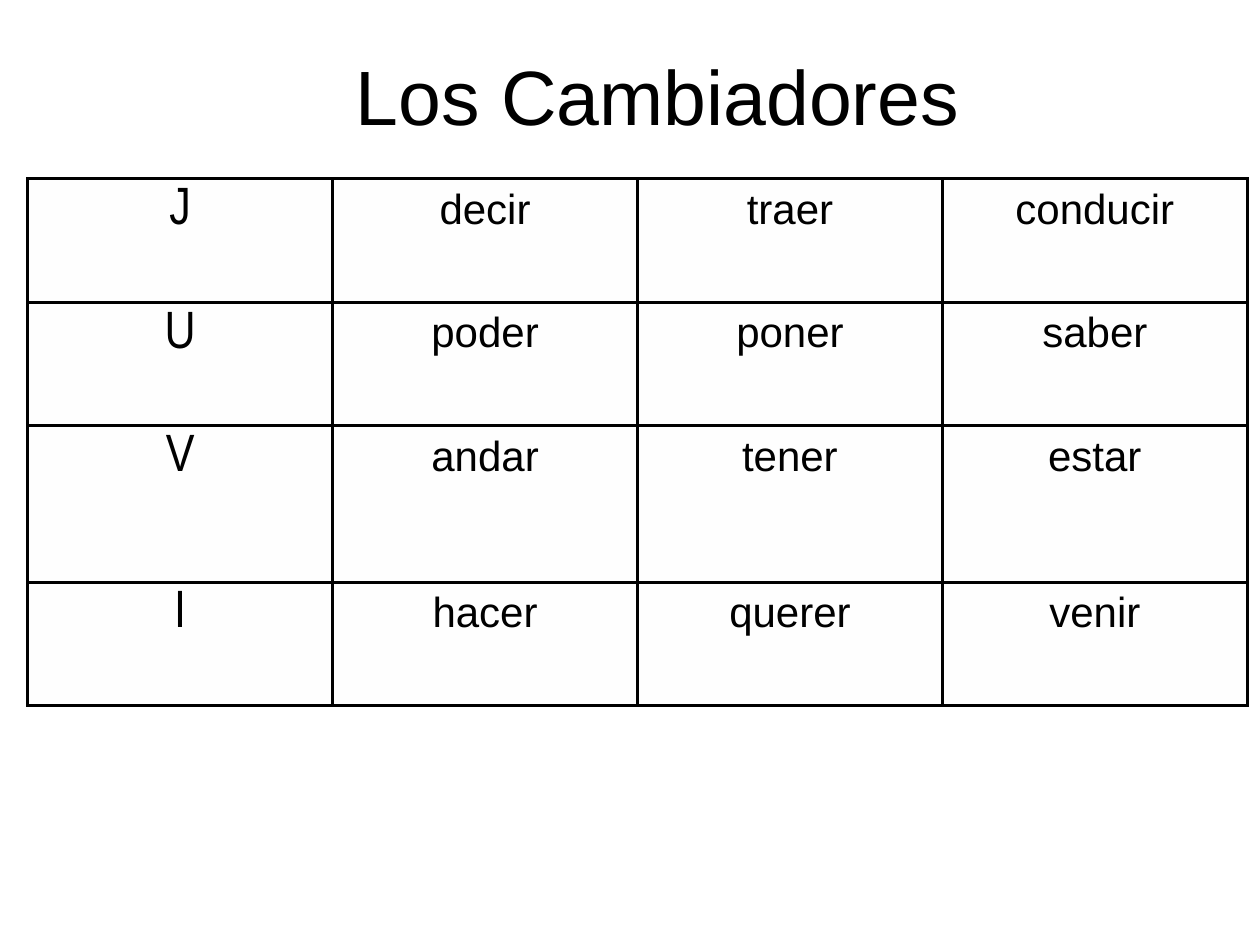
from dataclasses import dataclass

from lxml.etree import SubElement
from pptx import Presentation
from pptx.dml.color import RGBColor
from pptx.enum.text import MSO_ANCHOR, PP_ALIGN
from pptx.oxml.ns import qn
from pptx.util import Inches, Pt


@dataclass(frozen=True)
class Theme:
    ink: str = "000000"
    paper: str = "FEFEFE"
    font: str = "Arial"
    narrow: str = "Arial Narrow"
    title: int = 44
    stem: int = 30
    verb: int = 24
    rule: int = 2


def write(frame, text, size, font, color, align=PP_ALIGN.CENTER):
    para = frame.paragraphs[0]
    para.alignment = align
    run = para.add_run()
    run.text = text
    run.font.size = Pt(size)
    run.font.name = font
    run.font.color.rgb = RGBColor.from_string(color)


def frame_cell(cell, color, width):
    """Rule all four sides; call before the fill, which must come after."""
    props = cell._tc.get_or_add_tcPr()
    for side in ("lnL", "lnR", "lnT", "lnB"):
        line = SubElement(props, qn(f"a:{side}"), w=str(Pt(width)))
        fill = SubElement(line, qn("a:solidFill"))
        SubElement(fill, qn("a:srgbClr"), val=color)


class Deck:
    def __init__(self, slide, theme):
        self.slide = slide
        self.theme = theme

    def title(self, text, left, top, width, height):
        box = self.slide.shapes.add_textbox(
            Inches(left), Inches(top), Inches(width), Inches(height))
        frame = box.text_frame
        frame.word_wrap = True
        frame.vertical_anchor = MSO_ANCHOR.MIDDLE
        frame.margin_left = frame.margin_right = Inches(0.1)
        frame.margin_top = frame.margin_bottom = Inches(0.1)
        write(frame, text, size=self.theme.title, font=self.theme.font,
              color=self.theme.ink)

    def table(self, rows, left, top, width, heights):
        count = len(rows[0])
        grid = self.slide.shapes.add_table(
            len(rows), count, Inches(left), Inches(top),
            Inches(width * count), Inches(sum(heights))).table
        grid.first_row = grid.horz_banding = False
        for col in grid.columns:
            col.width = Inches(width)
        for r, (row, height) in enumerate(zip(rows, heights)):
            grid.rows[r].height = Inches(height)
            for c, text in enumerate(row):
                self.cell(grid.cell(r, c), text, stem=c == 0)

    def cell(self, cell, text, stem):
        theme = self.theme
        cell.margin_left = cell.margin_right = Inches(0.06)
        cell.margin_top = cell.margin_bottom = Inches(0.06)
        frame_cell(cell, theme.ink, theme.rule)
        cell.fill.solid()
        cell.fill.fore_color.rgb = RGBColor.from_string(theme.paper)
        write(cell.text_frame, text, color=theme.ink,
              size=theme.stem if stem else theme.verb,
              font=theme.narrow if stem else theme.font)


VERBS = [
    ("J", "decir", "traer", "conducir"),
    ("U", "poder", "poner", "saber"),
    ("V", "andar", "tener", "estar"),
    ("I", "hacer", "querer", "venir"),
]


def main():
    prs = Presentation()
    prs.slide_width, prs.slide_height = Inches(10), Inches(7.5)
    deck = Deck(prs.slides.add_slide(prs.slide_layouts[6]), Theme())
    deck.table(VERBS, 0.22, 1.42, 2.42, (0.98, 0.98, 1.24, 0.98))
    deck.title("Los Cambiadores", 0.44, -0.16, 9.56, 1.82)
    prs.save("out.pptx")


if __name__ == "__main__":
    main()
